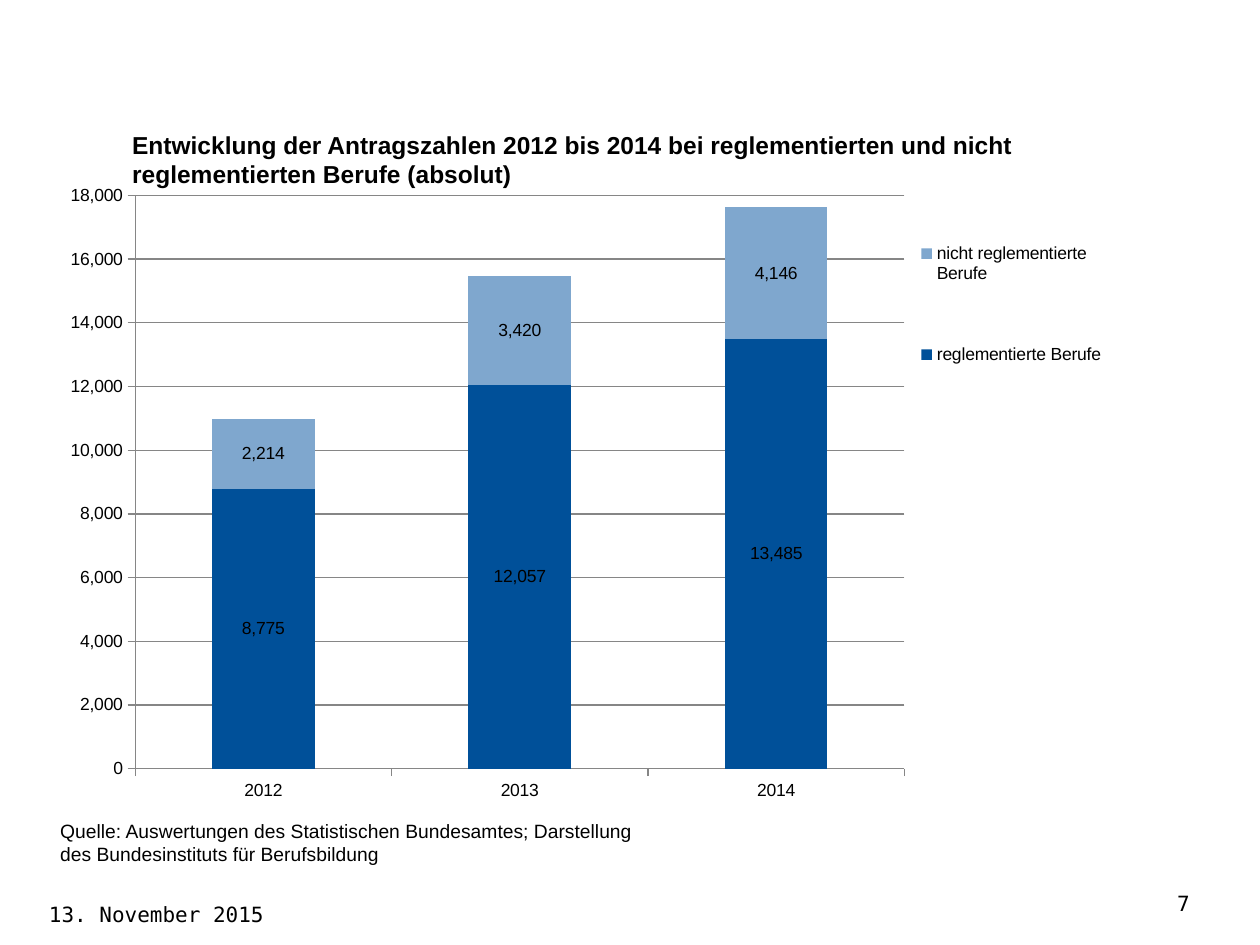
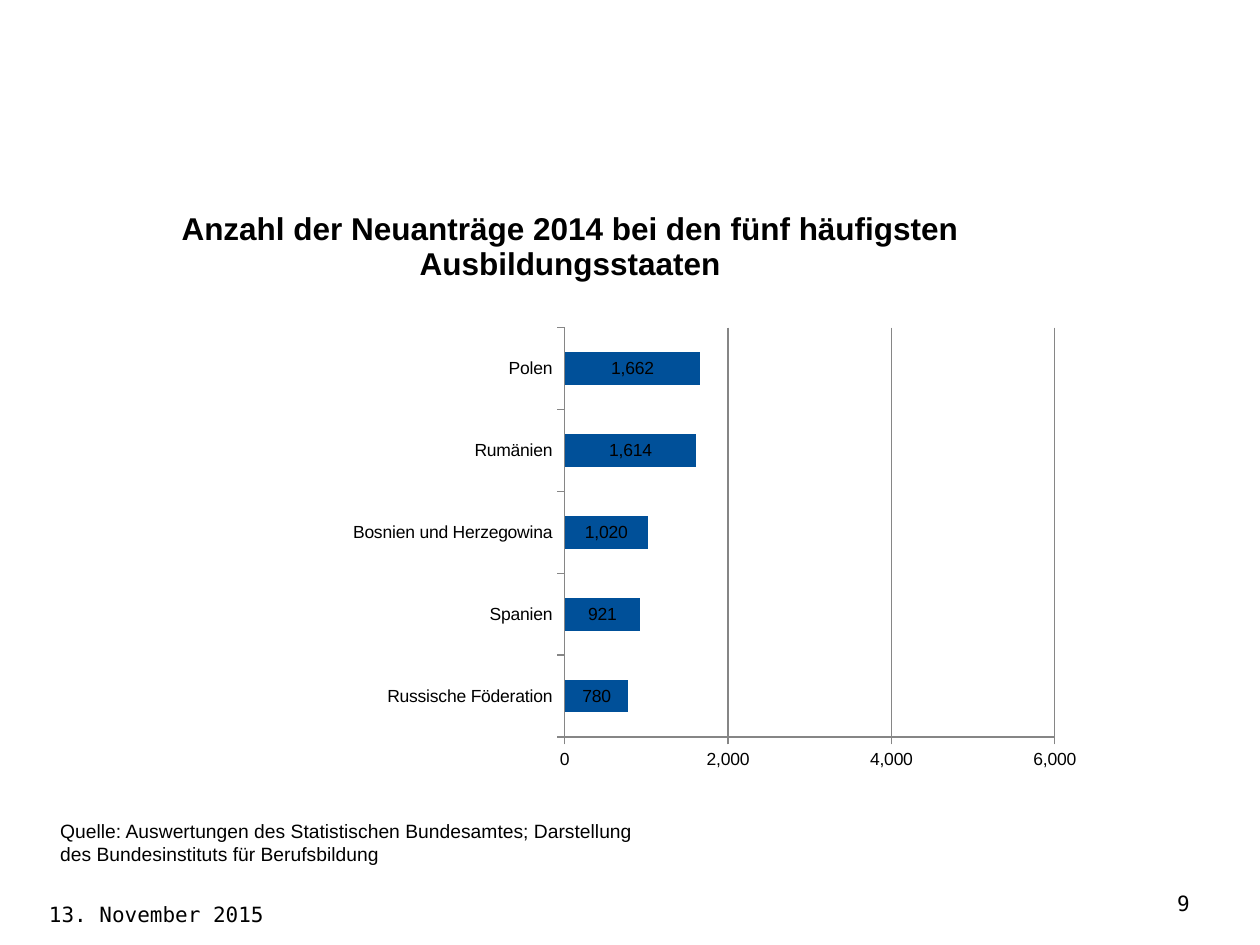
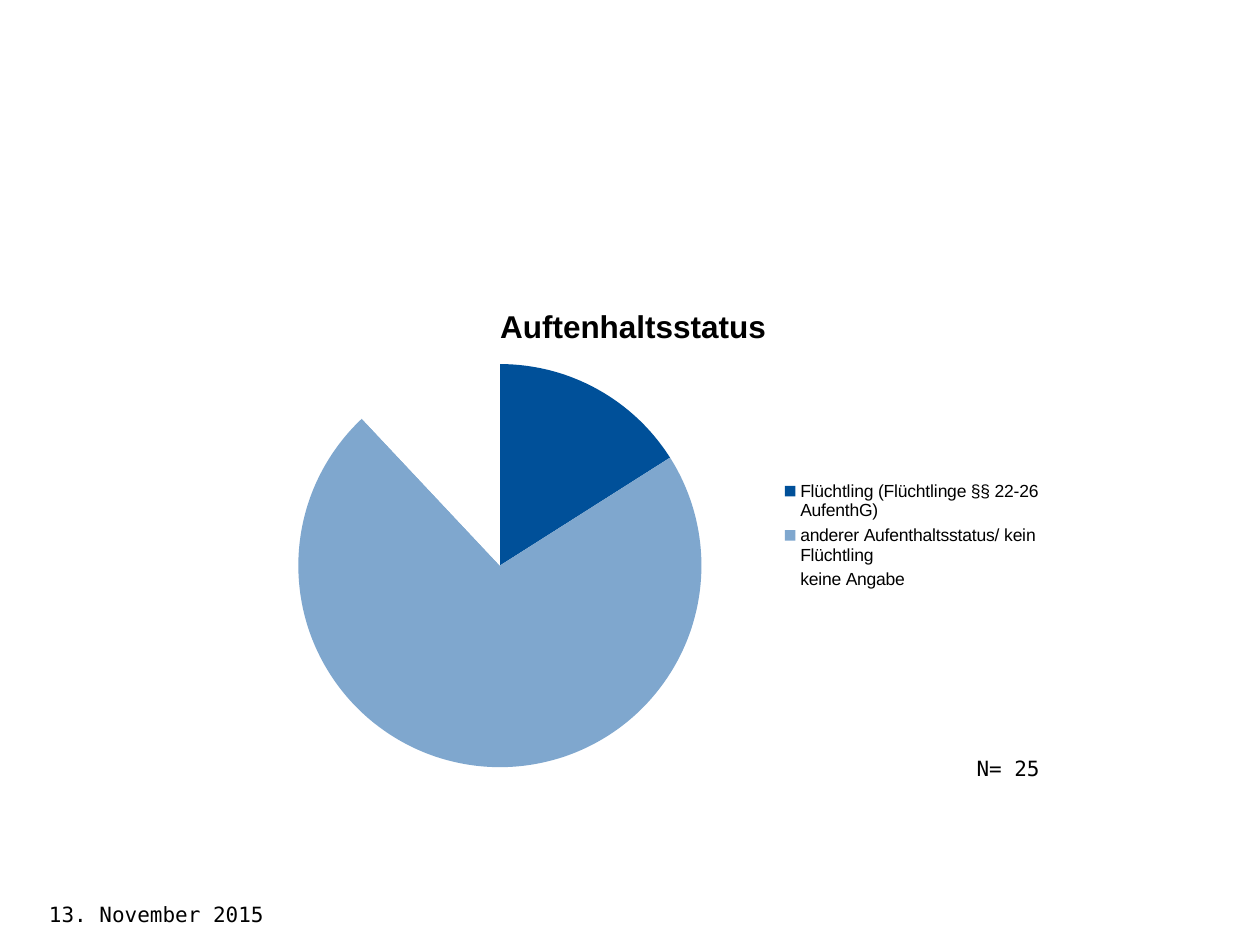
from dataclasses import dataclass

from lxml import etree
from pptx import Presentation
from pptx.chart.chart import Chart
from pptx.chart.data import CategoryChartData
from pptx.dml.color import RGBColor
from pptx.enum.chart import XL_CHART_TYPE, XL_LABEL_POSITION, XL_LEGEND_POSITION, XL_TICK_MARK
from pptx.enum.text import PP_ALIGN
from pptx.oxml.ns import qn
from pptx.slide import Slide
from pptx.util import Inches, Pt

STACKED = XL_CHART_TYPE.COLUMN_STACKED
BARS = XL_CHART_TYPE.BAR_CLUSTERED
PIE = XL_CHART_TYPE.PIE
CENTER = XL_LABEL_POSITION.CENTER
LEGEND_RIGHT = XL_LEGEND_POSITION.RIGHT
TICK_OUTSIDE = XL_TICK_MARK.OUTSIDE
LEFT = PP_ALIGN.LEFT
RIGHT = PP_ALIGN.RIGHT

BLACK = "000000"
WHITE = "FFFFFF"
GRAY = "868686"
DARK_BLUE = "005099"
LIGHT_BLUE = "7FA7CE"
SERIES_COLORS = (DARK_BLUE, LIGHT_BLUE, WHITE)
SANS = "Arial"
MONO = "DejaVu Sans Mono"
THOUSANDS = "#,##0"
DATE = "13. November 2015"
SOURCE = (
    "Quelle: Auswertungen des Statistischen Bundesamtes; "
    "Darstellung des Bundesinstituts für Berufsbildung"
)


@dataclass(frozen=True)
class Area:
    left: float
    top: float
    width: float
    height: float


@dataclass(frozen=True)
class ChartPlan:
    kind: XL_CHART_TYPE
    area: Area
    plot: Area
    categories: tuple[str, ...]
    series: dict[str, tuple[int, ...]]
    title: str = ""
    legend: bool = False
    legend_area: Area | None = None
    maximum: int = 0
    step: int = 2000


def color(value: str) -> RGBColor:
    return RGBColor.from_string(value)


def style_font(font, size: float, name: str = SANS, bold: bool = False) -> None:
    font.size = Pt(size)
    font.name = name
    font.bold = bold
    font.color.rgb = color(BLACK)


def add_text(page: Slide, text: str, area: Area, *, size: float = 12, name: str = MONO,
             bold: bool = False, align: PP_ALIGN = LEFT, inset: bool = True,
             indent: float = 0, line_height: float | None = None) -> None:
    box = page.shapes.add_textbox(Inches(area.left), Inches(area.top),
                                  Inches(area.width), Inches(area.height))
    frame = box.text_frame
    frame.word_wrap = True
    if not inset:
        frame.margin_left = frame.margin_right = frame.margin_top = frame.margin_bottom = 0
    para = frame.paragraphs[0]
    para.alignment = align
    if indent:
        para._p.get_or_add_pPr().set("marL", str(Inches(indent)))
    if line_height:
        para.line_spacing = Pt(line_height)
    span = para.add_run()
    span.text = text
    style_font(span.font, size, name, bold)


def set_layout(parent, area: Area, inner: bool = False) -> None:
    for old in parent.findall(qn("c:layout")):
        parent.remove(old)
    layout = etree.Element(qn("c:layout"))
    manual = etree.SubElement(layout, qn("c:manualLayout"))
    settings = {"layoutTarget": "inner"} if inner else {}
    settings |= {"xMode": "edge", "yMode": "edge", "x": area.left, "y": area.top,
                 "w": area.width, "h": area.height}
    for tag, value in settings.items():
        etree.SubElement(manual, qn(f"c:{tag}")).set("val", str(value))
    parent.insert(0 if inner else 1, layout)


def style_axes(chart: Chart, plan: ChartPlan) -> None:
    for axis in (chart.category_axis, chart.value_axis):
        axis.major_tick_mark = TICK_OUTSIDE
        axis.format.line.color.rgb = color(GRAY)
        axis.format.line.width = Pt(0.75)
    values = chart.value_axis
    values.minimum_scale = 0
    values.maximum_scale = plan.maximum
    values.major_unit = plan.step
    values.major_gridlines.format.line.color.rgb = color(GRAY)
    values.major_gridlines.format.line.width = Pt(0.75)
    values.tick_labels.number_format = THOUSANDS
    values.tick_labels.number_format_is_linked = False


def style_bars(chart: Chart, plan: ChartPlan) -> None:
    style_axes(chart, plan)
    bars = chart.plots[0]
    bars.gap_width = 150
    bars.overlap = 100 if plan.kind == STACKED else 0
    for series, fill in zip(bars.series, SERIES_COLORS):
        series.format.fill.solid()
        series.format.fill.fore_color.rgb = color(fill)
        labels = series.data_labels
        labels.show_value = True
        labels.position = CENTER
        labels.number_format = THOUSANDS
        labels.number_format_is_linked = False
        style_font(labels.font, 10)


def style_slices(chart: Chart) -> None:
    series = chart.plots[0].series[0]
    for index, fill in enumerate(SERIES_COLORS):
        point = series.points[index].format
        point.fill.solid()
        point.fill.fore_color.rgb = color(fill)
        point.line.fill.background()


def add_plan(page: Slide, plan: ChartPlan) -> None:
    data = CategoryChartData()
    data.categories = plan.categories
    for name, values in plan.series.items():
        data.add_series(name, values)
    area = plan.area
    chart = page.shapes.add_chart(plan.kind, Inches(area.left), Inches(area.top),
                                  Inches(area.width), Inches(area.height), data).chart
    style_font(chart.font, 10)
    chart.has_title = bool(plan.title)
    if plan.title:
        span = chart.chart_title.text_frame.paragraphs[0].add_run()
        span.text = plan.title
        style_font(span.font, 18, bold=True)
    chart.has_legend = plan.legend
    if plan.legend:
        chart.legend.position = LEGEND_RIGHT
        chart.legend.include_in_layout = False
        style_font(chart.legend.font, 10)
        if plan.legend_area:
            set_layout(chart.legend._element, plan.legend_area)
    chart.plots[0].vary_by_categories = plan.kind == PIE
    if plan.kind == PIE:
        style_slices(chart)
    else:
        style_bars(chart, plan)
    set_layout(chart._chartSpace.chart.plotArea, plan.plot, inner=True)


def add_page(deck, number: str = "", source: bool = False) -> Slide:
    page = deck.slides.add_slide(deck.slide_layouts[6])
    add_text(page, DATE, Area(0, 6.89, 10, 0.59), indent=0.29, line_height=30)
    if number:
        add_text(page, number, Area(7.37, 7.02, 2.17, 0.28), align=RIGHT)
    if source:
        add_text(page, SOURCE, Area(0.38, 6.45, 5, 0.47), size=11, name=SANS)
    return page


APPLICATIONS = ChartPlan(
    STACKED, Area(0.31, 1.29, 8.48, 5.23), Area(0.09, 0.05, 0.72, 0.87),
    ("2012", "2013", "2014"),
    {"reglementierte Berufe": (8775, 12057, 13485),
     "nicht reglementierte Berufe": (2214, 3420, 4146)},
    legend=True, legend_area=Area(0.82, 0.03, 0.18, 0.37), maximum=18000,
)
COUNTRIES = ChartPlan(
    BARS, Area(0.26, 1.45, 8.53, 4.9), Area(0.495, 0.235, 0.456, 0.663),
    ("Russische Föderation", "Spanien", "Bosnien und Herzegowina", "Rumänien", "Polen"),
    {"Neuanträge": (780, 921, 1020, 1614, 1662)},
    title="Anzahl der Neuanträge 2014 bei den fünf häufigsten Ausbildungsstaaten",
    maximum=6000,
)
RESIDENCE = ChartPlan(
    PIE, Area(1.75, 2.25, 6.62, 4), Area(0.09, 0.16, 0.49, 0.8),
    ("Flüchtling (Flüchtlinge §§ 22-26 AufenthG)",
     "anderer Aufenthaltsstatus/ kein Flüchtling", "keine Angabe"),
    {"Anteil": (16, 72, 12)}, title="Auftenhaltsstatus ", legend=True,
)


def main() -> None:
    deck = Presentation()
    deck.slide_width = Inches(10)
    deck.slide_height = Inches(7.5)

    page = add_page(deck, "7", source=True)
    add_plan(page, APPLICATIONS)
    add_text(page, "Entwicklung der Antragszahlen 2012 bis 2014 bei reglementierten "
             "und nicht reglementierten Berufe (absolut)",
             Area(0.95, 0.98, 8.69, 0.57), size=14, name=SANS, bold=True)

    add_plan(add_page(deck, "9", source=True), COUNTRIES)

    page = add_page(deck)
    add_plan(page, RESIDENCE)
    add_text(page, "N= 25", Area(7.75, 6, 1.25, 0.2), inset=False)

    deck.save("out.pptx")


if __name__ == "__main__":
    main()
